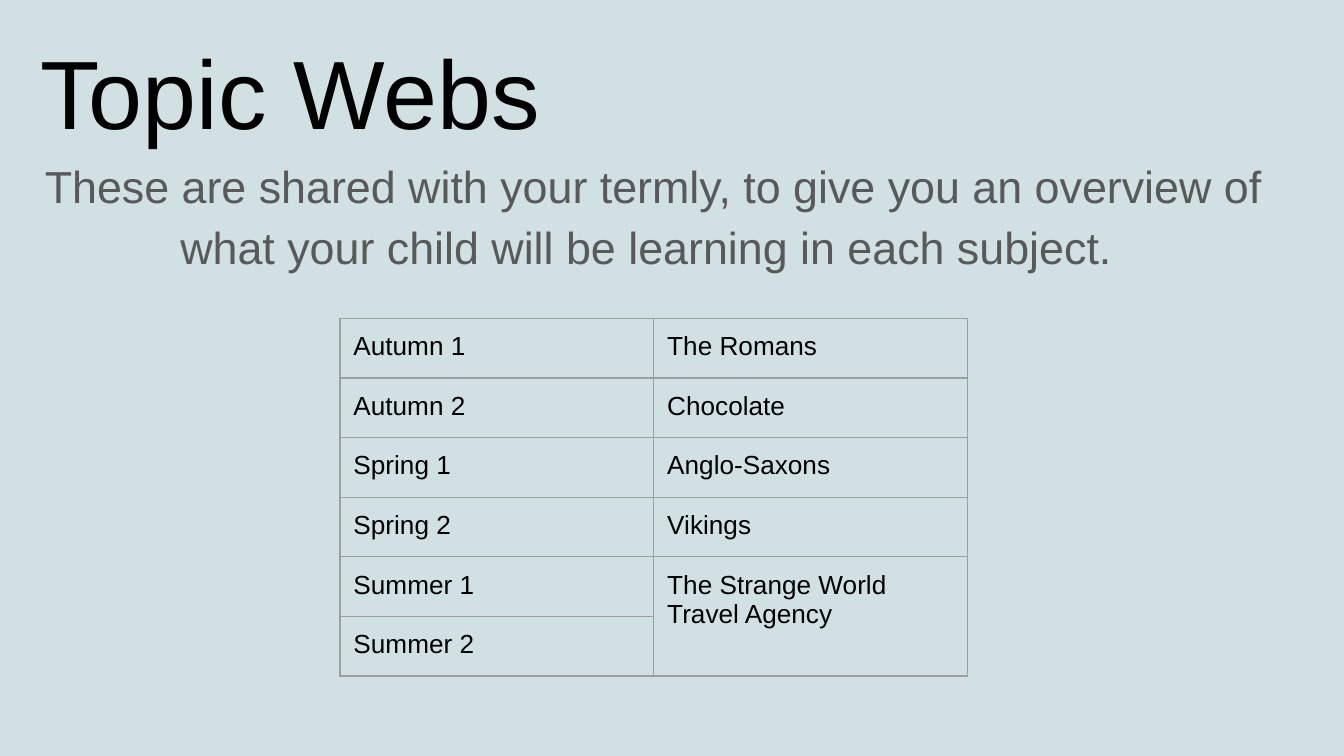
from lxml.etree import SubElement
from pptx import Presentation
from pptx.dml.color import RGBColor
from pptx.enum.text import MSO_ANCHOR, MSO_AUTO_SIZE, PP_ALIGN
from pptx.oxml.ns import qn
from pptx.util import Inches, Pt

# Content
TITLE = "Topic Webs"
INTRO = ("These are shared with your termly, to give you an overview of "
         "what your child will be learning in each subject.")
TOPICS = [
    ("Autumn 1", "The Romans"),
    ("Autumn 2", "Chocolate"),
    ("Spring 1", "Anglo-Saxons"),
    ("Spring 2", "Vikings"),
    ("Summer 1", "The Strange World Travel Agency"),
    ("Summer 2", ""),
]

# Format
BACKGROUND, BLACK, GREY, BORDER = "D0E0E3", "000000", "595959", "9E9E9E"
MARGINS = {f"margin_{side}": Inches(0.1)
           for side in ("left", "top", "right", "bottom")}


def rgb(code):
    return RGBColor.from_string(code)


def set_attrs(obj, values):
    for name, value in values.items():
        setattr(obj, name, value)


def write(tf, text, size, color, **paragraph):
    p = tf.paragraphs[0]
    set_attrs(p, paragraph)
    r = p.add_run()
    r.text = text
    set_attrs(r.font, {"name": "Arial", "size": Pt(size)})
    r.font.color.rgb = rgb(color)


def place(sp, left, top, width, height, anchor):
    set_attrs(sp, {"left": Inches(left), "top": Inches(top),
                   "width": Inches(width), "height": Inches(height)})
    set_attrs(sp.text_frame, {**MARGINS, "word_wrap": True,
                              "auto_size": MSO_AUTO_SIZE.NONE,
                              "vertical_anchor": anchor})
    return sp.text_frame


def add_borders(cell):
    tcPr = cell._tc.get_or_add_tcPr()
    for i, side in enumerate(("lnL", "lnR", "lnT", "lnB")):
        ln = tcPr.makeelement(qn(f"a:{side}"), {"w": str(Pt(0.75))})
        fill = SubElement(ln, qn("a:solidFill"))
        SubElement(fill, qn("a:srgbClr"), val=BORDER)
        tcPr.insert(i, ln)  # borders come before the fill


# Widescreen slide, 16:9
prs = Presentation()
set_attrs(prs, {"slide_width": Inches(10),
                "slide_height": Inches(10) * 9 // 16})
s = prs.slides.add_slide(prs.slide_layouts[0])
s.background.fill.solid()
s.background.fill.fore_color.rgb = rgb(BACKGROUND)

# Title and introduction
tf = place(s.shapes.title, 0.2, 0.2, 9.32, 1.01, MSO_ANCHOR.BOTTOM)
write(tf, TITLE, 52, BLACK, alignment=PP_ALIGN.LEFT)
tf = place(s.placeholders[1], 0.2, 1.08, 9.32, 0.87, MSO_ANCHOR.TOP)
write(tf, INTRO, 24, GREY, alignment=PP_ALIGN.CENTER,
      line_spacing=1.0, space_before=Pt(0))
write(tf, " ", 28, GREY)

# Topic table
table = s.shapes.add_table(len(TOPICS), 2, Inches(2.53), Inches(2.37),
                           Inches(4.67), Inches(2.66)).table
set_attrs(table, {"first_row": False, "horz_banding": False})
for row, texts in zip(table.rows, TOPICS):
    for cell, text in zip(row.cells, texts):
        set_attrs(cell, MARGINS)
        cell.fill.background()
        add_borders(cell)
        if text:
            write(cell.text_frame, text, 14, BLACK)

# The last topic covers both summer terms
table.cell(4, 1).merge(table.cell(5, 1))

prs.save("out.pptx")
